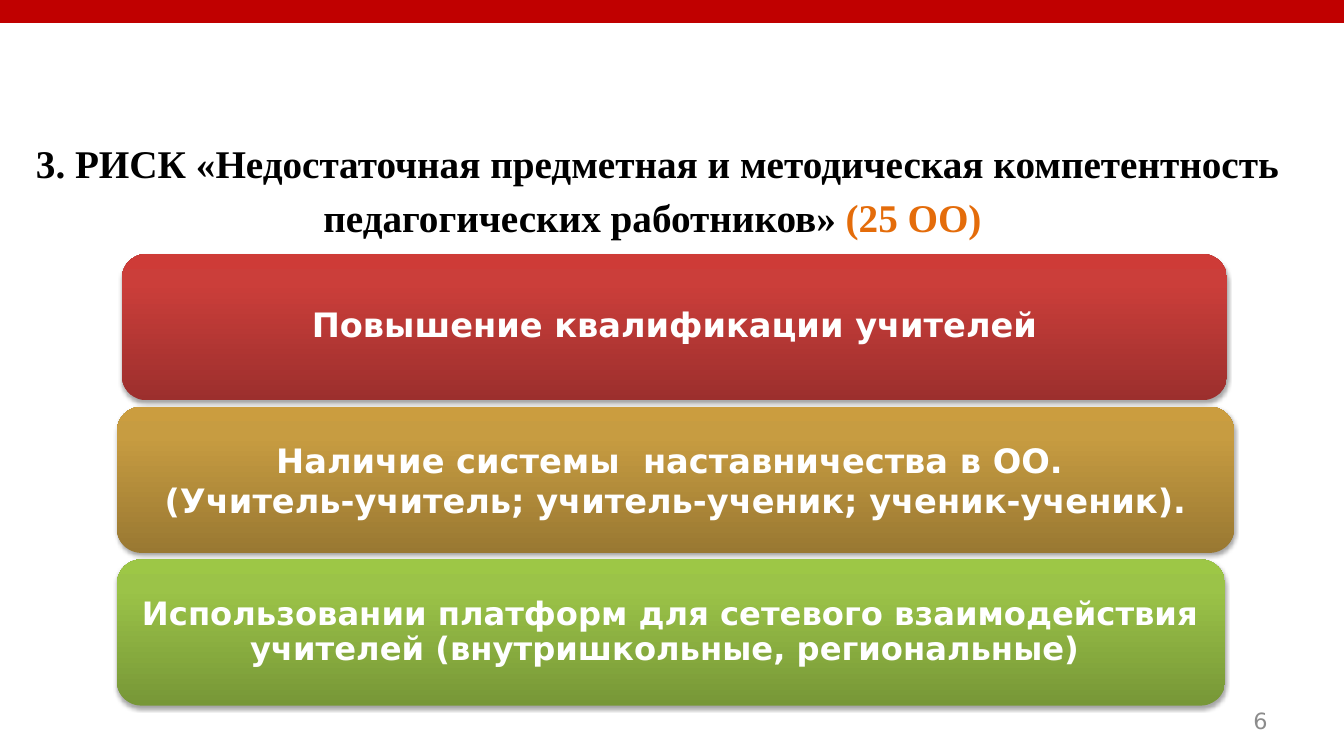
from lxml import etree
from pptx import Presentation, util as u
from pptx.dml.color import RGBColor
from pptx.enum import shapes, text
from pptx.oxml import parse_xml

WIDE, HIGH = 13.33, 7.5
SANS, SERIF = "DejaVu Sans", "Times New Roman"
HUE = {"band": "C00000", "ink": "000000", "note": "E46C0A",
       "page": "8C8C8C", "white": "FFFFFF"}
RAMP = {"red": ("9C2F2D", "CB3E3A", "CE3B37"),
        "gold": ("997832", "C79C41", "CB9D3F"),
        "green": ("779737", "9BC348", "9DC746")}
NS = 'xmlns:a="http://schemas.openxmlformats.org/drawingml/2006/main"'
CARDS = [
    ("red", 1.21, 10.96, 24, 0.9, "Повышение квалификации учителей"),
    ("gold", 1.16, 11.08, 24, 1.0,
     "Наличие системы  наставничества в ОО. \v"
     "(Учитель-учитель; учитель-ученик; ученик-ученик)."),
    ("green", 1.16, 10.99, 23, 0.9,
     "Использовании платформ для сетевого взаимодействия "
     "учителей (внутришкольные, региональные) "),
]


def style(run, face, size, hue, bold=True):
    """Set the font of a run."""
    font = run.font
    font.name, font.size, font.bold = face, u.Pt(size), bold
    font.color.rgb = RGBColor.from_string(HUE[hue])


def inch(*box):
    """Turn a box in inches into lengths."""
    return [u.Inches(n) for n in box]


def shade(card, ramp):
    """Give a card its upward gradient and soft shadow."""
    stops = "".join(f'<a:gs pos="{pos}"><a:srgbClr val="{hue}"/></a:gs>'
                    for pos, hue in zip((0, 80000, 100000), ramp))
    card.fill.background()
    card.line.fill.background()
    props = card.fill._xPr
    old = props.find("{*}noFill")
    props.replace(old, parse_xml(
        f'<a:gradFill {NS} rotWithShape="1"><a:gsLst>{stops}</a:gsLst>'
        '<a:lin ang="16200000" scaled="0"/></a:gradFill>'))
    props.append(etree.fromstring(
        f'<a:effectLst {NS}><a:outerShdw blurRad="{u.Pt(3.1)}" dist="{u.Pt(1.8)}" '
        'dir="5400000" rotWithShape="0"><a:srgbClr val="000000">'
        '<a:alpha val="35000"/></a:srgbClr></a:outerShdw></a:effectLst>'))


def band(slide, box):
    """Draw the strip along the top edge."""
    bar = slide.shapes.add_shape(shapes.MSO_SHAPE.RECTANGLE, *inch(*box))
    bar.shadow.inherit = False
    bar.fill.solid()
    bar.fill.fore_color.rgb = RGBColor.from_string(HUE["band"])
    bar.line.color.rgb = RGBColor.from_string(HUE["band"])
    bar.line.width = u.Pt(2)


def title(slide, box):
    """Write the risk heading with its count."""
    frame = slide.shapes.add_textbox(*inch(*box)).text_frame
    frame.word_wrap = True
    para = frame.paragraphs[0]
    para.alignment = text.PP_ALIGN.CENTER
    para.line_spacing = 1.15
    for words, hue in (("3. РИСК «Недостаточная предметная и методическая "
                        "компетентность педагогических работников» ", "ink"),
                       ("(25 ОО) ", "note")):
        run = para.add_run()
        run.text = words
        style(run, SERIF, 28, hue)


def stack(slide, top, height):
    """Stack the measure cards in equal rows."""
    tall = 1.45
    step = (height - tall) / (len(CARDS) - 1)
    for row, (ramp, left, width, size, lead, words) in enumerate(CARDS):
        card = slide.shapes.add_shape(shapes.MSO_SHAPE.ROUNDED_RECTANGLE,
                                      *inch(left, top + row * step, width, tall))
        shade(card, RAMP[ramp])
        frame = card.text_frame
        frame.word_wrap = True
        frame.vertical_anchor = text.MSO_ANCHOR.MIDDLE
        frame.text = words
        para = frame.paragraphs[0]
        para.alignment = text.PP_ALIGN.CENTER
        para.line_spacing = lead
        for run in para.runs:
            style(run, SANS, size, "white")


def number(slide, box):
    """Write the page number."""
    frame = slide.shapes.add_textbox(*inch(*box)).text_frame
    frame.word_wrap = True
    frame.vertical_anchor = text.MSO_ANCHOR.MIDDLE
    frame.text = "6"
    para = frame.paragraphs[0]
    para.alignment = text.PP_ALIGN.RIGHT
    style(para.runs[0], SANS, 16, "page", False)


def main():
    """Build and save the slide."""
    deck = Presentation()
    deck.slide_width, deck.slide_height = inch(WIDE, HIGH)
    slide = deck.slides.add_slide(deck.slide_layouts[6])
    band(slide, (0, 0, WIDE, 0.21))
    stack(slide, 2.52, 4.48)
    title(slide, (0.18, 1.26, 12.68, 1.1))
    number(slide, (9.56, 6.95, 3.11, 0.4))
    deck.save("out.pptx")


if __name__ == "__main__":
    main()
